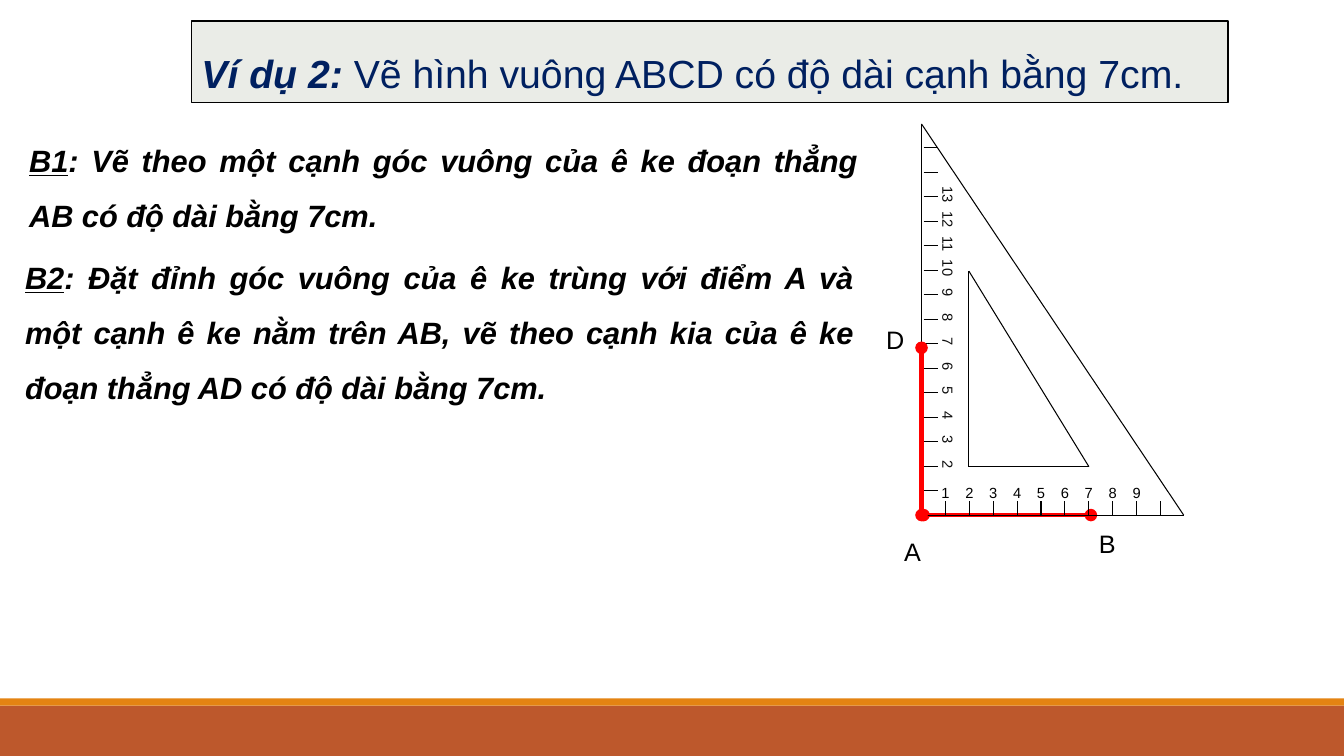
from lxml import etree
from pptx import Presentation
from pptx.dml.color import RGBColor
from pptx.enum import shapes, text
from pptx.oxml import ns
from pptx.util import Inches, Pt

# Content
TITLE = [("Ví dụ 2: ", True), ("Vẽ hình vuông ABCD có độ dài cạnh bằng 7cm.", False)]
STEPS = [
    ("B1", ": Vẽ theo một cạnh góc vuông của ê ke đoạn thẳng AB có độ dài bằng 7cm.",
     (0.19, 1.17, 8.42, 1.21)),
    ("B2", ": Đặt đỉnh góc vuông của ê ke trùng với điểm A và một cạnh ê ke nằm trên AB, "
           "vẽ theo cạnh kia của ê ke đoạn thẳng AD có độ dài bằng 7cm.",
     (0.15, 2.33, 8.42, 1.77)),
]
POINTS = [("A", 8.87, 5.27), ("B", 10.8, 5.19), ("D", 8.69, 3.17)]
BASE_NUMBERS = range(1, 10)
SIDE_NUMBERS = range(2, 14)

# Set square geometry, in inches
CORNER_X, CORNER_Y = 9.14, 5.11
OUTER = [(CORNER_X, 1.23), (CORNER_X, CORNER_Y), (11.74, CORNER_Y)]
INNER = [(9.61, 2.69), (9.61, 4.63), (10.8, 4.63)]
BASE_STEP, SIDE_STEP = 0.237, 0.243
BASE_TICKS, SIDE_TICKS = 10, 15
TICK = 0.14
SIDE_TICK_X = 9.16

FONT = "Arial"
BLACK = RGBColor(0x00, 0x00, 0x00)
NEAR_BLACK = RGBColor(0x0D, 0x0D, 0x0D)
NAVY = RGBColor(0x00, 0x20, 0x60)
RED = RGBColor(0xFF, 0x00, 0x00)
PALE = RGBColor(0xEA, 0xEC, 0xE7)
RUST = RGBColor(0xBD, 0x58, 0x2C)
ORANGE = RGBColor(0xE4, 0x83, 0x12)

deck = Presentation()
deck.slide_width, deck.slide_height = Inches(13.33), Inches(7.5)
slide = deck.slides.add_slide(deck.slide_layouts[6])


def add_bar(box, fill, border=None):
    bar = slide.shapes.add_shape(shapes.MSO_SHAPE.RECTANGLE, *map(Inches, box))
    bar.shadow.inherit = False
    bar.fill.solid()
    bar.fill.fore_color.rgb = fill
    if border is None:
        bar.line.fill.background()
    else:
        bar.line.color.rgb = border
        bar.line.width = Pt(1)
    return bar


def add_line(start, end, color=BLACK, width=0.75, dots=False):
    line = slide.shapes.add_connector(
        shapes.MSO_CONNECTOR.STRAIGHT, *map(Inches, (*start, *end)))
    line.line.color.rgb = color
    line.line.width = Pt(width)
    if dots:
        outline = line.line._get_or_add_ln()
        for tip in ("a:headEnd", "a:tailEnd"):
            etree.SubElement(outline, ns.qn(tip), type="oval")
    etree.SubElement(line._element.spPr, ns.qn("a:effectLst"))


def add_triangle(corners):
    for i, corner in enumerate(corners):
        add_line(corners[i - 1], corner)


def style(run, size, color, bold=False, italic=False, underline=False):
    font = run.font
    font.name, font.size, font.color.rgb = FONT, Pt(size), color
    font.bold, font.italic, font.underline = bold, italic, underline


def add_box(box):
    holder = slide.shapes.add_textbox(*map(Inches, box))
    holder.text_frame.word_wrap = True
    return holder


def justify(paragraph):
    paragraph.alignment = text.PP_ALIGN.JUSTIFY
    paragraph.line_spacing = 1.5


def add_number(number, x, y, color, rotation=0):
    label = add_box((x - 0.2, y - 0.14, 0.4, 0.28))
    label.rotation = rotation
    frame = label.text_frame
    frame.margin_left = frame.margin_right = 0
    frame.text = str(number)
    frame.paragraphs[0].alignment = text.PP_ALIGN.CENTER
    style(frame.paragraphs[0].runs[0], 10.5, color)


# Footer bands
add_bar((0, 7, 13.33, 0.5), RUST)
add_bar((0, 6.93, 13.33, 0.07), ORANGE)

# Side AB, beneath the set square
add_line((9.16, CORNER_Y), (10.82, CORNER_Y), RED, 3, dots=True)

# Set square with its two scales
add_triangle(OUTER)
add_triangle(INNER)
for n in range(1, BASE_TICKS + 1):
    x = CORNER_X + n * BASE_STEP
    add_line((x, CORNER_Y), (x, CORNER_Y - TICK))
    if n in BASE_NUMBERS:
        add_number(n, x, 4.89, BLACK)
for n in range(1, SIDE_TICKS + 1):
    y = CORNER_Y - n * SIDE_STEP
    add_line((SIDE_TICK_X, y), (SIDE_TICK_X + TICK, y))
    if n in SIDE_NUMBERS:
        add_number(n, 9.4, y - 0.02, NEAR_BLACK, 90)

# Side AD, above the set square
add_line((CORNER_X, CORNER_Y), (CORNER_X, 3.45), RED, 3, dots=True)

# Point names
for name, left, top in POINTS:
    frame = add_box((left, top, 0.4, 0.4)).text_frame
    frame.text = name
    style(frame.paragraphs[0].runs[0], 18, BLACK)

# Title
heading = add_bar((1.9, 0.21, 10.28, 0.81), PALE, BLACK).text_frame
heading.word_wrap = True
heading.vertical_anchor = text.MSO_ANCHOR.TOP
justify(heading.paragraphs[0])
for words, strong in TITLE:
    run = heading.paragraphs[0].add_run()
    run.text = words
    style(run, 28, NAVY, strong, strong)

# Steps
for name, words, box in STEPS:
    paragraph = add_box(box).text_frame.paragraphs[0]
    justify(paragraph)
    paragraph.space_before = paragraph.space_after = Pt(6)
    for part, underlined in ((name, True), (words, False)):
        run = paragraph.add_run()
        run.text = part
        style(run, 22, BLACK, True, True, underlined)

deck.save("out.pptx")
